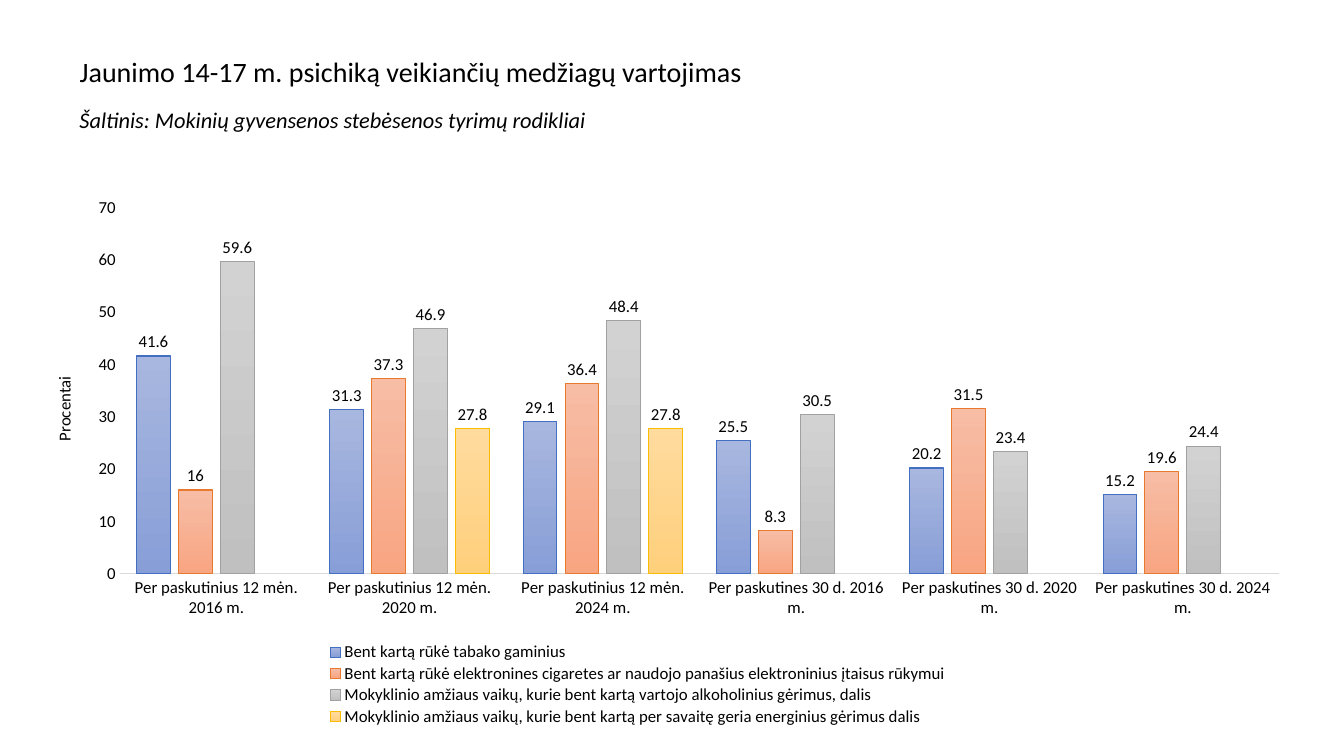
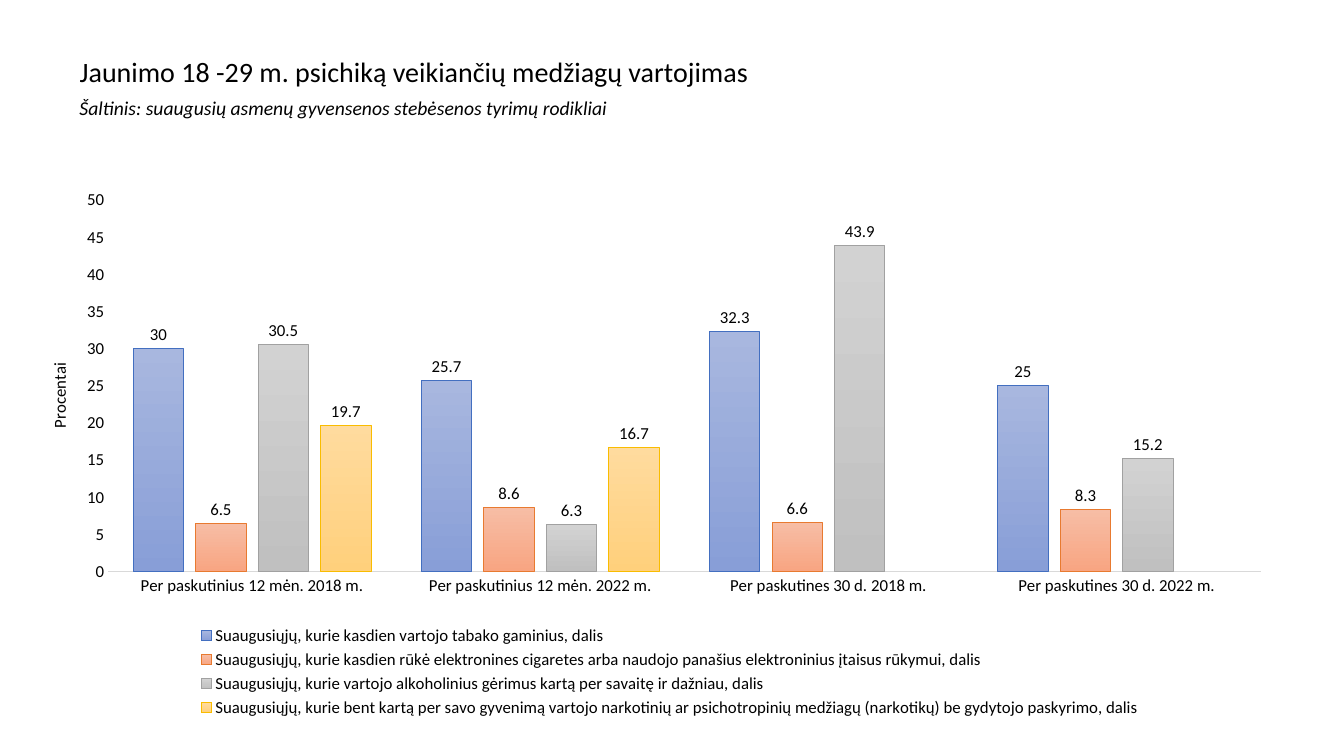
import pptx
import pptx.chart.data
import pptx.dml.color
import pptx.enum.chart
import pptx.enum.text
import pptx.oxml
import pptx.oxml.ns
import pptx.util
from pptx.util import Inches, Pt

FONT = "Calibri"
BLACK = "000000"
AXIS_GREY = "D9D9D9"
SERIES_COLORS = [
    ("A8B7DF", "889ED7", "436FC0"),
    ("F7BDA5", "F8A582", "E87A30"),
    ("D2D2D2", "C0C0C0", "A1A1A1"),
    ("FFDB9E", "FFD07C", "F9BC00"),
]

SLIDES = [
    {
        "title": "Jaunimo 14-17 m. psichiką veikiančių medžiagų vartojimas",
        "source": "Šaltinis: Mokinių gyvensenos stebėsenos tyrimų rodikliai",
        "source_size": 16,
        "source_box": (0.69, 1.03, 11.96, 0.34),
        "chart_box": (0.28, 1.51, 12.6, 5.77),
        "plot": {"x": 0.072, "y": 0.095, "w": 0.913, "h": 0.63},
        "legend": {"x": 0.18, "y": 0.84, "w": 0.6, "h": 0.15},
        "axis_title": {"x": 0.017, "y": 0.38},
        "scale": (70, 10),
        "cats": [
            f"{period} {year} m."
            for period in ("Per paskutinius 12 mėn.", "Per paskutines 30 d.")
            for year in (2016, 2020, 2024)
        ],
        "series": [
            ("Bent kartą rūkė tabako gaminius", (41.6, 31.3, 29.1, 25.5, 20.2, 15.2)),
            ("Bent kartą rūkė elektronines cigaretes ar naudojo panašius elektroninius įtaisus rūkymui",
             (16, 37.3, 36.4, 8.3, 31.5, 19.6)),
            ("Mokyklinio amžiaus vaikų, kurie bent kartą vartojo alkoholinius gėrimus, dalis",
             (59.6, 46.9, 48.4, 30.5, 23.4, 24.4)),
            ("Mokyklinio amžiaus vaikų, kurie bent kartą per savaitę geria energinius gėrimus dalis",
             (None, 27.8, 27.8, None, None, None)),
        ],
    },
    {
        "title": "Jaunimo 18 -29 m. psichiką veikiančių medžiagų vartojimas",
        "source": "Šaltinis: suaugusių asmenų gyvensenos stebėsenos tyrimų rodikliai",
        "source_size": 14,
        "source_box": (0.69, 0.93, 11.96, 0.31),
        "chart_box": (0.36, 1.43, 12.28, 5.85),
        "plot": {"x": 0.058, "y": 0.095, "w": 0.931, "h": 0.63},
        "legend": {"x": 0.117, "y": 0.81, "w": 0.79, "h": 0.17},
        "axis_title": {"x": 0.007, "y": 0.366},
        "scale": (50, 5),
        "cats": [
            f"{period} {year} m."
            for period in ("Per paskutinius 12 mėn.", "Per paskutines 30 d.")
            for year in (2018, 2022)
        ],
        "series": [
            ("Suaugusiųjų, kurie kasdien vartojo tabako gaminius, dalis", (30, 25.7, 32.3, 25)),
            ("Suaugusiųjų, kurie kasdien rūkė elektronines cigaretes arba naudojo panašius "
             "elektroninius įtaisus rūkymui, dalis", (6.5, 8.6, 6.6, 8.3)),
            ("Suaugusiųjų, kurie vartojo alkoholinius gėrimus kartą per savaitę ir dažniau, dalis",
             (30.5, 6.3, 43.9, 15.2)),
            ("Suaugusiųjų, kurie bent kartą per savo gyvenimą vartojo narkotinių ar psichotropinių "
             "medžiagų (narkotikų) be gydytojo paskyrimo, dalis", (19.7, 16.7, None, None)),
        ],
    },
]


def style_font(font, size, italic=False):
    font.name = FONT
    font.size = Pt(size)
    font.bold = False
    font.italic = italic
    font.color.rgb = pptx.dml.color.RGBColor.from_string(BLACK)


def set_layout(parent, index, sizes, inner=False):
    for old in parent.xpath("c:layout"):
        parent.remove(old)
    target = '<c:layoutTarget val="inner"/>' if inner else ""
    modes = '<c:xMode val="edge"/><c:yMode val="edge"/>'
    values = "".join(f'<c:{key} val="{value}"/>' for key, value in sizes.items())
    parent.insert(index, pptx.oxml.parse_xml(
        f'<c:layout {pptx.oxml.ns.nsdecls("c")}><c:manualLayout>'
        f"{target}{modes}{values}</c:manualLayout></c:layout>"))


prs = pptx.Presentation()
prs.slide_width = Inches(13.33)
prs.slide_height = Inches(7.5)

for spec_data in SLIDES:
    s = prs.slides.add_slide(prs.slide_layouts[5])

    title = s.shapes.title
    title.left, title.top, title.width, title.height = map(Inches, (0.69, 0.22, 11.96, 1.01))
    source = s.shapes.add_textbox(*map(Inches, spec_data["source_box"]))
    for sp, text, size, italic in (
        (title, spec_data["title"], 20, False),
        (source, spec_data["source"], spec_data["source_size"], True),
    ):
        tf = sp.text_frame
        tf.word_wrap = True
        tf.vertical_anchor = pptx.enum.text.MSO_ANCHOR.MIDDLE
        tf.text = text
        p = tf.paragraphs[0]
        p.alignment = pptx.enum.text.PP_ALIGN.LEFT
        p.line_spacing = 0.9
        style_font(p.runs[0].font, size, italic)

    data = pptx.chart.data.CategoryChartData()
    data.categories = spec_data["cats"]
    for name, values in spec_data["series"]:
        data.add_series(name, values)
    chart = s.shapes.add_chart(
        pptx.enum.chart.XL_CHART_TYPE.COLUMN_CLUSTERED,
        *map(Inches, spec_data["chart_box"]), data).chart
    chart.has_title = False
    style_font(chart.font, 10)
    set_layout(chart.element.xpath("c:chart/c:plotArea")[0], 0, spec_data["plot"], inner=True)

    chart.has_legend = True
    legend = chart.legend
    legend.position = pptx.enum.chart.XL_LEGEND_POSITION.BOTTOM
    legend.include_in_layout = False
    style_font(legend.font, 12)
    set_layout(legend.element if hasattr(legend, "element") else legend._element, 1, spec_data["legend"])

    cat_axis, val_axis = chart.category_axis, chart.value_axis
    for axis in (cat_axis, val_axis):
        axis.has_major_gridlines = False
        axis.major_tick_mark = pptx.enum.chart.XL_TICK_MARK.NONE
        axis.minor_tick_mark = pptx.enum.chart.XL_TICK_MARK.NONE
        style_font(axis.tick_labels.font, 12)
    cat_axis.format.line.color.rgb = pptx.dml.color.RGBColor.from_string(AXIS_GREY)
    cat_axis.format.line.width = Pt(0.75)
    val_axis.format.line.fill.background()
    val_axis.minimum_scale = 0
    val_axis.maximum_scale, val_axis.major_unit = spec_data["scale"]

    axis_title = val_axis.axis_title
    axis_title.text_frame.text = "Procentai"
    style_font(axis_title.text_frame.paragraphs[0].runs[0].font, 12)
    title_xml = chart.element.xpath(".//c:valAx/c:title")[0]
    body = title_xml.xpath(".//a:bodyPr")[0]
    body.set("rot", "-5400000")
    body.set("vert", "horz")
    set_layout(title_xml, 1, spec_data["axis_title"])

    plot = chart.plots[0]
    plot.vary_by_categories = False
    plot.gap_width = 100
    plot.overlap = -24
    for series, (top, bottom, outline) in zip(plot.series, SERIES_COLORS):
        fill = series.format.fill
        fill.gradient()
        fill.gradient_angle = 270
        for stop, color in zip(fill.gradient_stops, (top, bottom)):
            stop.color.rgb = pptx.dml.color.RGBColor.from_string(color)
        series.format.line.color.rgb = pptx.dml.color.RGBColor.from_string(outline)
        series.format.line.width = Pt(0.75)
        labels = series.data_labels
        labels.show_value = True
        labels.position = pptx.enum.chart.XL_LABEL_POSITION.OUTSIDE_END
        style_font(labels.font, 12)

prs.save("out.pptx")
